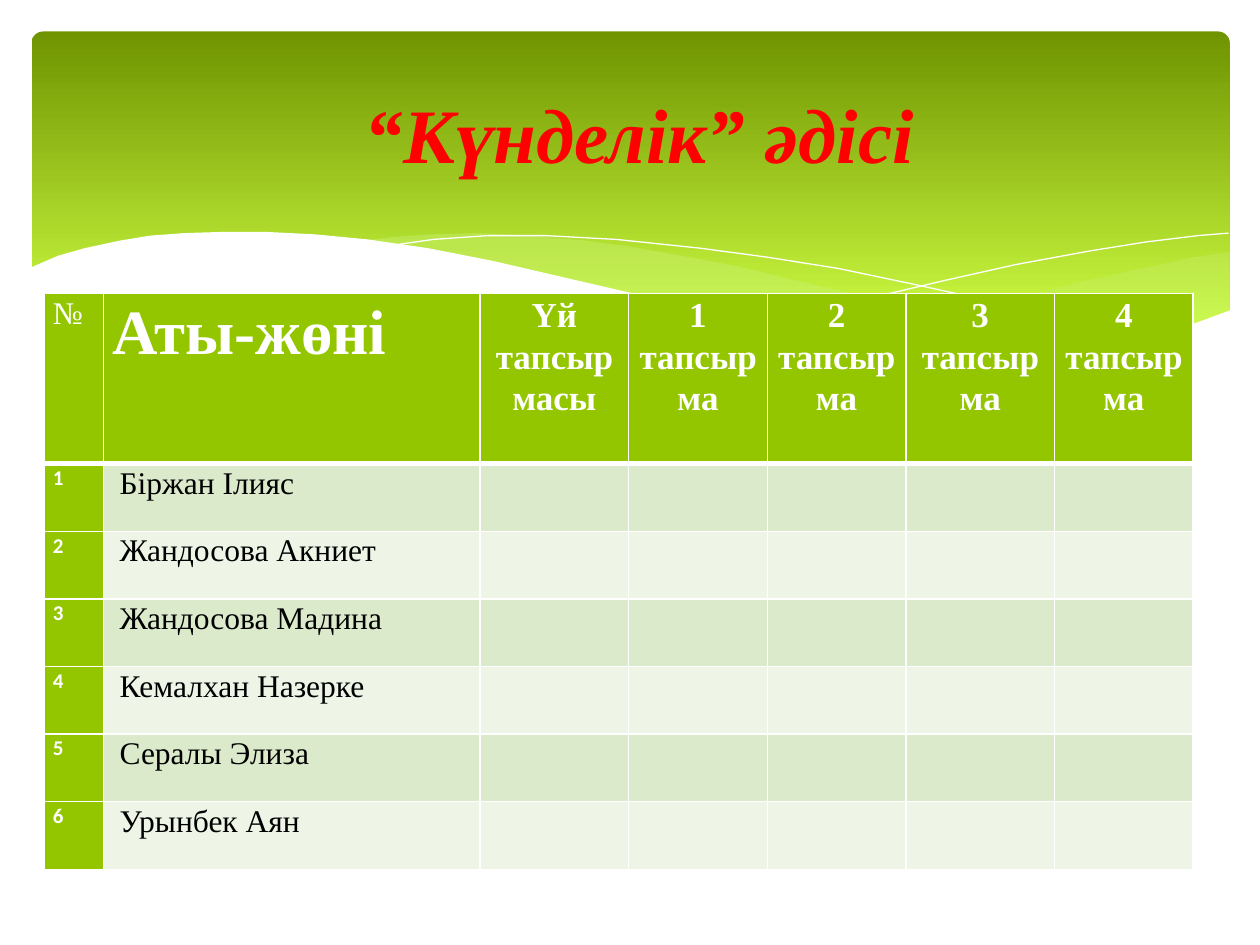
from lxml import etree
from pptx import Presentation
from pptx.dml.color import RGBColor
from pptx.enum.shapes import MSO_SHAPE
from pptx.enum.text import MSO_ANCHOR, PP_ALIGN
from pptx.oxml.ns import qn
from pptx.util import Inches, Pt

ROUNDED = MSO_SHAPE.ROUNDED_RECTANGLE
MIDDLE = MSO_ANCHOR.MIDDLE
LEFT, CENTER = PP_ALIGN.LEFT, PP_ALIGN.CENTER
SERIF, SANS = "Times New Roman", "Calibri"
WHITE, BLACK, RED = "FFFFFF", "000000", "FF0000"
GREEN, LIME = "94C600", "CAF278"
BANDS = ("DCEACC", "EEF5E7")

# Wave outlines, in inches from the corner of the wave box
RIGHT_RIPPLE = [
    (9.53, .16), (9.25, .2), (8.83, .29), (8.38, .39), (7.82, .53), (7.3, .64),
    (6.83, .73), (6.38, .81), (6.82, .87), (7.22, .91), (7.58, .93), (7.91, .94),
    (8.21, .93), (8.49, .9), (8.74, .86), (8.98, .81), (9.19, .75), (9.4, .68),
    (9.53, .63)]
MIDDLE_RIPPLE = [
    (8.7, .89), (8.14, .81), (7.52, .7), (6.83, .56), (6.06, .38), (5.61, .27),
    (5.18, .19), (4.79, .12), (4.42, .07), (3.97, .03), (3.57, .01), (3.21, .02),
    (2.9, .04), (2.63, .07), (3, .12), (3.39, .19), (3.81, .27), (4.26, .38),
    (5.07, .56), (5.78, .71), (6.42, .82), (6.99, .9), (7.5, .93), (7.95, .94),
    (8.34, .93)]
FALLING_LINE = [
    (2.86, .11), (3.21, .06), (3.64, .03), (4.1, .03), (4.66, .06), (5.33, .13),
    (5.85, .2), (6.42, .29), (7.04, .42), (7.72, .57), (8.46, .77), (8.84, .88)]
RISING_LINE = [
    (5.9, .73), (6.49, .57), (7.25, .39), (7.83, .26), (8.43, .15), (8.87, .08),
    (9.28, .03), (9.52, .01)]
WHITE_WAVE = [
    (9.54, .62), (9.27, .72), (8.97, .81), (8.64, .87), (8.27, .91), (7.86, .93),
    (7.38, .91), (6.85, .86), (6.25, .78), (5.56, .66), (4.8, .49), (4.24, .36),
    (3.68, .23), (3.17, .13), (2.69, .06), (2.27, .02), (1.88, 0), (1.54, 0),
    (1.23, .01), (.96, .03), (.72, .07), (.44, .13), (.23, .19), (0, .29),
    (0, 1.45), (9.54, 1.45)]

COLUMN_WIDTHS = (0.47, 2.99, 1.18, 1.1, 1.1, 1.18, 1.1)
TASKS = ["Үй тапсырмасы"] + [f"{number} тапсырма" for number in range(1, 5)]
PUPILS = ["Біржан Ілияс", "Жандосова Акниет", "Жандосова Мадина",
          "Кемалхан Назерке", "Сералы Элиза", "Урынбек Аян"]


def color(hex_string):
    return RGBColor.from_string(hex_string)


def add_run(para, text, font, size, hex_string, bold=False, italic=False):
    span = para.add_run()
    span.text = text
    span.font.name = font
    span.font.size = Pt(size)
    span.font.color.rgb = color(hex_string)
    span.font.bold = bold
    span.font.italic = italic


def add_outline(page, box, points, closed):
    left, top = box[:2]
    corners = [(Inches(left + x), Inches(top + y)) for x, y in points]
    builder = page.shapes.build_freeform(*corners[0])
    builder.add_line_segments(corners[1:], close=closed)
    shape = builder.convert_to_shape()
    shape.shadow.inherit = False
    return shape


def add_wave(page, box, points, hex_string, opacity=100):
    wave = add_outline(page, box, points, closed=True)
    wave.fill.solid()
    wave.fill.fore_color.rgb = color(hex_string)
    wave.line.fill.background()
    if opacity < 100:
        tint = wave.fill._xPr.find(qn("a:solidFill"))[0]
        etree.SubElement(tint, qn("a:alpha"), val=str(opacity * 1000))


def add_hairline(page, box, points):
    curve = add_outline(page, box, points, closed=False)
    curve.fill.background()
    curve.line.color.rgb = color(WHITE)
    curve.line.width = Pt(0)


def add_banner(page, box):
    banner = page.shapes.add_shape(ROUNDED, *map(Inches, box))
    banner.adjustments[0] = 0.034
    banner.shadow.inherit = False
    banner.line.fill.background()
    banner.fill.gradient()
    banner.fill.gradient_angle = 270
    stops = ((0, "6F9400"), (0.9, "D0FF44"))
    for stop, (position, hex_string) in zip(banner.fill.gradient_stops, stops):
        stop.position = position
        stop.color.rgb = color(hex_string)


def add_waves(page, box):
    add_wave(page, box, RIGHT_RIPPLE, LIME, 29)
    add_wave(page, box, MIDDLE_RIPPLE, LIME, 40)
    add_hairline(page, box, FALLING_LINE)
    add_hairline(page, box, RISING_LINE)
    add_wave(page, box, WHITE_WAVE, WHITE)


def set_borders(cell, top, bottom):
    """Draw white borders; top and bottom widths are in points."""
    properties = cell._tc.get_or_add_tcPr()
    for side, width in (("L", 1), ("R", 1), ("T", top), ("B", bottom)):
        line = etree.SubElement(properties, qn(f"a:ln{side}"), w=str(Pt(width)))
        fill = etree.SubElement(line, qn("a:solidFill"))
        etree.SubElement(fill, qn("a:srgbClr"), val=WHITE)


def write_cell(cell, text, font, size, hex_string, bold, align=LEFT):
    para = cell.text_frame.paragraphs[0]
    para.alignment = align
    para.line_spacing = 1.07
    para.space_after = Pt(8)
    add_run(para, text, font, size, hex_string, bold)


def add_diary(page, box):
    rows, columns = len(PUPILS) + 1, len(COLUMN_WIDTHS)
    table = page.shapes.add_table(rows, columns, *map(Inches, box)).table
    for column, width in zip(table.columns, COLUMN_WIDTHS):
        column.width = Inches(width)
    header_height = 1.35
    for index, row in enumerate(table.rows):
        pupil_height = (box[3] - header_height) / len(PUPILS)
        row.height = Inches(pupil_height if index else header_height)
        for place, cell in enumerate(row.cells):
            cell.margin_left = cell.margin_right = Inches(0.07)
            cell.margin_top = cell.margin_bottom = 0
            set_borders(cell, 3 if index == 1 else 1, 1 if index else 3)
            cell.fill.solid()
            is_head = index == 0 or place == 0
            cell.fill.fore_color.rgb = color(GREEN if is_head else BANDS[(index - 1) % 2])

    write_cell(table.cell(0, 0), "№", SERIF, 18, WHITE, False)
    write_cell(table.cell(0, 1), "Аты-жөні", SERIF, 36, WHITE, True)
    for place, task in enumerate(TASKS, 2):
        write_cell(table.cell(0, place), task, SERIF, 20, WHITE, True, CENTER)
    for index, pupil in enumerate(PUPILS, 1):
        write_cell(table.cell(index, 0), str(index), SANS, 12, WHITE, True)
        name_cell = table.cell(index, 1)
        name_cell.margin_left = Inches(0.13)
        write_cell(name_cell, pupil, SERIF, 18, BLACK, False)


def place_title(page, box):
    title = page.shapes.title
    title.left, title.top, title.width, title.height = map(Inches, box)
    page.shapes.element.append(title.element)  # bring to front
    frame = title.text_frame
    frame.word_wrap = True
    frame.vertical_anchor = MIDDLE
    para = frame.paragraphs[0]
    para.alignment = CENTER
    add_run(para, " “Күнделік” әдісі", SERIF, 44, RED, bold=True, italic=True)


def main():
    deck = Presentation()
    deck.slide_width, deck.slide_height = Inches(10), Inches(7.5)
    page = deck.slides.add_slide(deck.slide_layouts[5])
    add_banner(page, (0.25, 0.25, 9.51, 2.7))
    add_waves(page, (0.23, 1.84, 9.54, 1.45))
    add_diary(page, (0.35, 2.33, 9.12, 4.57))
    place_title(page, (0.5, 0.37, 9, 1.37))
    deck.save("out.pptx")


if __name__ == "__main__":
    main()
